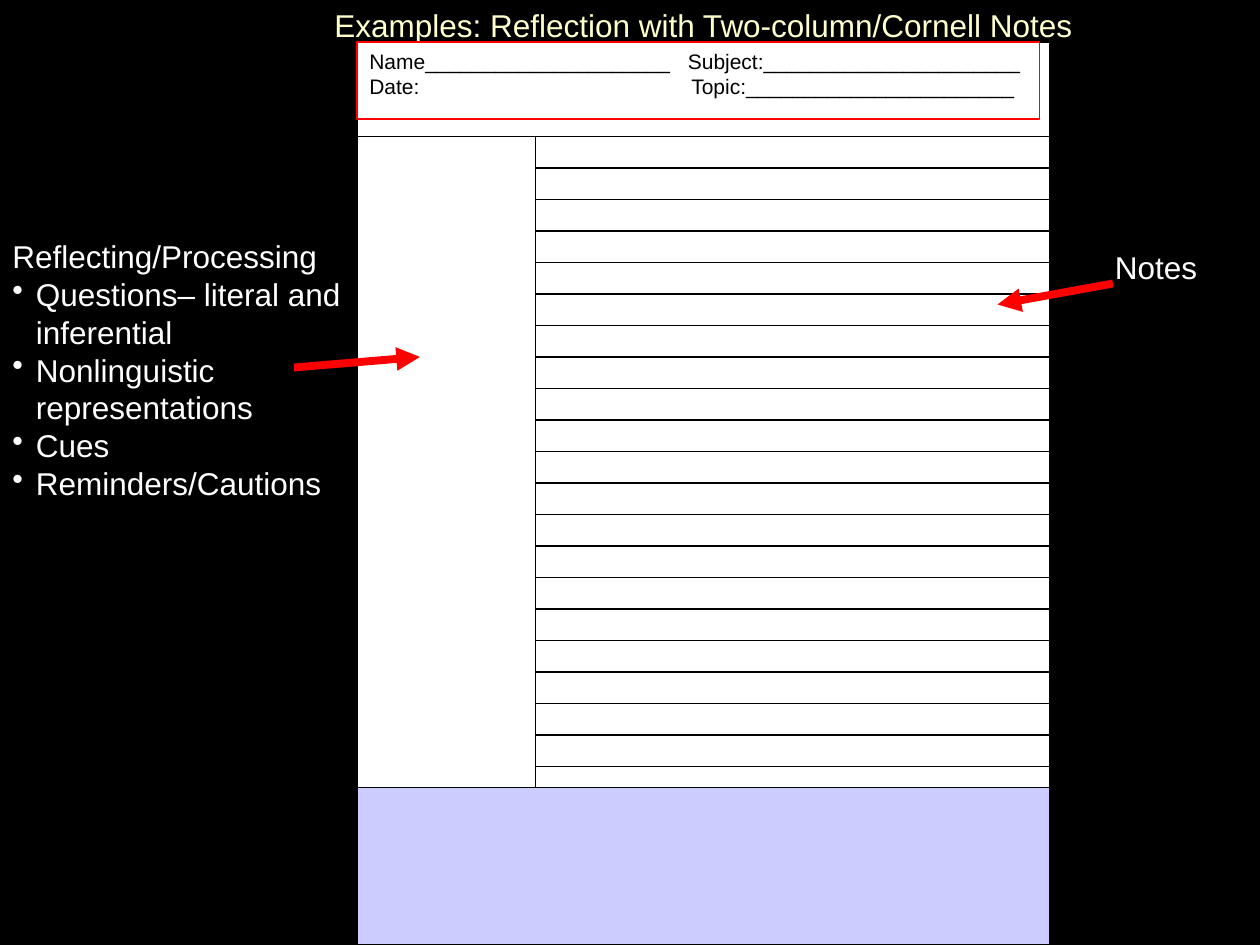
from pptx import Presentation
from pptx.dml.color import RGBColor
from pptx.enum.shapes import MSO_CONNECTOR, MSO_SHAPE
from pptx.enum.text import MSO_ANCHOR, PP_ALIGN
from pptx.oxml.ns import qn
from pptx.util import Pt
from lxml.etree import SubElement

BLACK = RGBColor(0, 0, 0)
WHITE = RGBColor(255, 255, 255)
CREAM = RGBColor(255, 255, 204)
LILAC = RGBColor(204, 204, 255)
RED = RGBColor(255, 0, 0)


def write(shape, lines, size, color, align=PP_ALIGN.LEFT):
    """Fill a shape with one paragraph per line and return the paragraphs."""
    frame = shape.text_frame
    frame.word_wrap = True
    frame.vertical_anchor = MSO_ANCHOR.TOP
    frame.text = "\n".join(lines)
    for para in frame.paragraphs:
        para.alignment = align
        para.line_spacing = Pt(size * 1.2)
        for run in para.runs:
            style = {"name": "Arial", "size": Pt(size)}
            for key, value in style.items():
                setattr(run.font, key, value)
            run.font.color.rgb = color
    return frame.paragraphs


def add_text(slide, box, lines, color, align=PP_ALIGN.LEFT):
    shape = slide.shapes.add_textbox(*map(Pt, box))
    return write(shape, lines, 18, color, align)


def add_rect(slide, box, fill=None, line=BLACK):
    rect = slide.shapes.add_shape(MSO_SHAPE.RECTANGLE, *map(Pt, box))
    rect.shadow.inherit = False
    if fill is None:
        rect.fill.background()
    else:
        rect.fill.solid()
        rect.fill.fore_color.rgb = fill
    rect.line.color.rgb = line
    rect.line.width = Pt(0.75)
    return rect


def add_line(slide, start, end, color=BLACK, width=0.75):
    line = slide.shapes.add_connector(
        MSO_CONNECTOR.STRAIGHT, *map(Pt, (*start, *end)))
    line.line.color.rgb = color
    line.line.width = Pt(width)
    SubElement(line._element.spPr, qn("a:effectLst"))
    return line


def add_arrow(slide, start, end):
    arrow = add_line(slide, start, end, RED, 4.5)
    SubElement(arrow.line._get_or_add_ln(), qn("a:tailEnd"), type="triangle")


def add_header(slide, box):
    rect = add_rect(slide, box, line=RED)
    lines = ["Name" + "_" * 21 + "\tSubject:" + "_" * 22,
             "Date:\tTopic:" + "_" * 23]
    for para, stop in zip(write(rect, lines, 12, BLACK), (182, 184)):
        tabs = SubElement(para._p.get_or_add_pPr(), qn("a:tabLst"))
        SubElement(tabs, qn("a:tab"), pos=str(Pt(stop)), algn="l")


def add_page(slide, box):
    """Draw the note page: header, cue column, ruled notes and summary."""
    left, top, width, height = box
    right, bottom = left + width, top + height
    split, head, foot, gap = left + 102, top + 54, bottom - 90, 18
    add_rect(slide, box, WHITE)
    add_line(slide, (split, head), (split, foot))
    add_rect(slide, (left, foot, width, bottom - foot), LILAC)
    add_header(slide, (left, top, width - 6, 44))
    add_line(slide, (left, head), (right, head))
    for y in range(head + gap, foot, gap):
        add_line(slide, (split, y), (right, y))


def add_cues(slide, box):
    lines = ["Reflecting/Processing", "Questions– literal and inferential",
             "Nonlinguistic representations", "Cues", "Reminders/Cautions"]
    for i, para in enumerate(add_text(slide, box, lines, WHITE)):
        props = para._p.get_or_add_pPr()
        props.set("marL", str(Pt(13.5)))
        props.set("indent", str(-Pt(13.5)))
        if i:
            SubElement(props, qn("a:buChar"), char="•")


def main():
    deck = Presentation()
    deck.slide_width, deck.slide_height = Pt(720), Pt(540)
    slide = deck.slides.add_slide(deck.slide_layouts[6])
    slide.background.fill.solid()
    slide.background.fill.fore_color.rgb = BLACK

    add_text(slide, (42, 0, 720, 29),
             ["Examples: Reflection with Two-column/Cornell Notes"],
             CREAM, PP_ALIGN.CENTER)
    add_page(slide, (204, 24, 396, 516))
    add_text(slide, (630, 138, 132, 29), ["Notes"], WHITE)
    add_cues(slide, (0, 132, 210, 202))
    add_arrow(slide, (168, 210), (240, 204))
    add_arrow(slide, (636, 162), (570, 174))
    deck.save("out.pptx")


if __name__ == "__main__":
    main()
